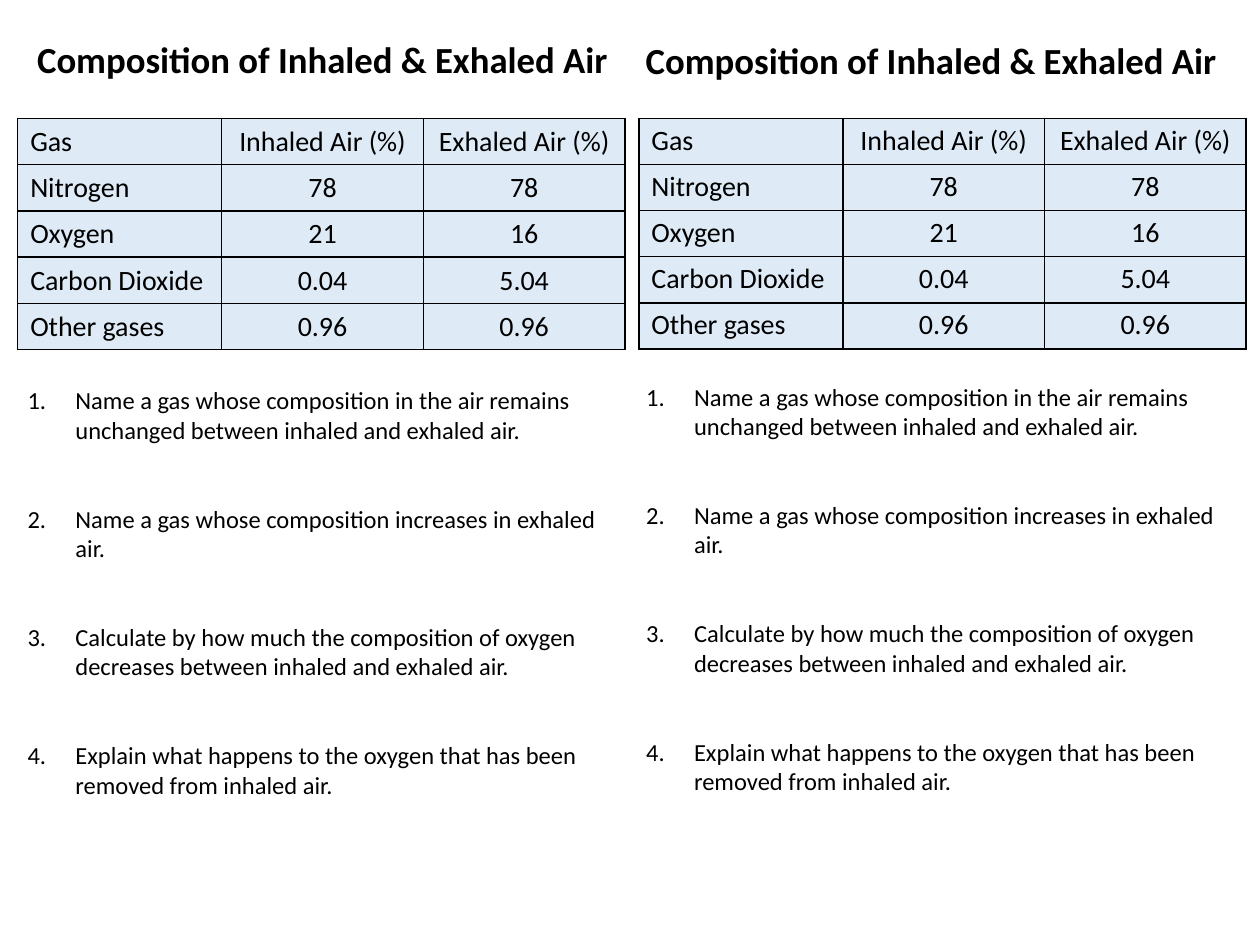
from lxml import etree
from pptx import Presentation
from pptx.dml.color import RGBColor
from pptx.enum.text import MSO_ANCHOR, MSO_AUTO_SIZE, PP_ALIGN
from pptx.oxml.ns import qn
from pptx.util import Inches, Pt

COLORS = {"text": "000000", "border": "000000", "cell": "DEEBF7"}
FONTS = {
    "title": {"name": "Calibri", "size": Pt(21), "bold": True},
    "cell": {"name": "Calibri", "size": Pt(16), "bold": False},
    "question": {"name": "Calibri", "size": Pt(14), "bold": False},
}
FRAME = {"word_wrap": True, "auto_size": MSO_AUTO_SIZE.SHAPE_TO_FIT_TEXT,
         "vertical_anchor": MSO_ANCHOR.TOP}
TITLE = "Composition of Inhaled & Exhaled Air"
ROWS = [
    ["Gas", "Inhaled Air (%)", "Exhaled Air (%)"],
    ["Nitrogen", "78", "78"],
    ["Oxygen", "21", "16"],
    ["Carbon Dioxide", "0.04", "5.04"],
    ["Other gases", "0.96", "0.96"],
]
COL_WIDTHS = [1.62, 1.6, 1.6]
TABLE_HEIGHT = 1.83
QUESTIONS = [
    "Name a gas whose composition in the air remains unchanged between inhaled and exhaled air.",
    "Name a gas whose composition increases in exhaled air.",
    "Calculate by how much the composition of oxygen decreases between inhaled and exhaled air.",
    "Explain what happens to the oxygen that has been removed from inhaled air.",
]
HALVES = [
    {"title": (0.15, 0.24), "table": (0.14, 0.94), "questions": (0.12, 3.01), "cell_margin": 0.05},
    {"title": (4.98, 0.25), "table": (5.07, 0.94), "questions": (5.03, 2.98), "cell_margin": 0.04},
]


def write(p, text, kind, align):
    p.alignment = align
    r = p.add_run()
    r.text = text
    for key, value in FONTS[kind].items():
        setattr(r.font, key, value)
    r.font.color.rgb = RGBColor.from_string(COLORS["text"])


def add_borders(cell):
    tcPr = cell._tc.get_or_add_tcPr()
    for i, side in enumerate(("lnL", "lnR", "lnT", "lnB")):
        ln = etree.Element(qn(f"a:{side}"), w=str(Pt(1)))
        fill = etree.SubElement(ln, qn("a:solidFill"))
        etree.SubElement(fill, qn("a:srgbClr"), val=COLORS["border"])
        tcPr.insert(i, ln)


prs = Presentation()
prs.slide_width, prs.slide_height = Inches(10), Inches(7.5)
s = prs.slides.add_slide(prs.slide_layouts[5])

for i, half in enumerate(HALVES):
    left, top = half["table"]
    table = s.shapes.add_table(len(ROWS), len(COL_WIDTHS), Inches(left), Inches(top),
                               Inches(sum(COL_WIDTHS)), Inches(TABLE_HEIGHT)).table
    table.first_row = table.horz_banding = False
    for col, width in zip(table.columns, COL_WIDTHS):
        col.width = Inches(width)
    for y, row in enumerate(ROWS):
        for x, text in enumerate(row):
            cell = table.cell(y, x)
            cell.margin_top = cell.margin_bottom = Inches(half["cell_margin"])
            cell.fill.solid()
            cell.fill.fore_color.rgb = RGBColor.from_string(COLORS["cell"])
            add_borders(cell)
            write(cell.text_frame.paragraphs[0], text, "cell",
                  PP_ALIGN.CENTER if x else PP_ALIGN.LEFT)

    left, top = half["questions"]
    sp = s.shapes.add_textbox(Inches(left), Inches(top), Inches(4.85), Inches(3.64))
    tf = sp.text_frame
    for key, value in FRAME.items():
        setattr(tf, key, value)
    for n, question in enumerate(QUESTIONS):
        p = tf.add_paragraph() if n else tf.paragraphs[0]
        write(p, question, "question", PP_ALIGN.LEFT)
        p.space_before = Pt(34 if n else 0)
        pPr = p._p.get_or_add_pPr()
        pPr.set("marL", str(Inches(0.38)))
        pPr.set("indent", str(-Inches(0.38)))
        etree.SubElement(pPr, qn("a:buFont"), typeface="+mj-lt")
        etree.SubElement(pPr, qn("a:buAutoNum"), type="arabicPeriod")

    left, top = half["title"]
    sp = s.shapes.add_textbox(0, 0, 0, 0) if i else s.shapes.title
    sp.left, sp.top, sp.width, sp.height = map(Inches, (left, top, 4.82, 0.45))
    for key, value in FRAME.items():
        setattr(sp.text_frame, key, value)
    write(sp.text_frame.paragraphs[0], TITLE, "title", PP_ALIGN.CENTER)

prs.save("out.pptx")
